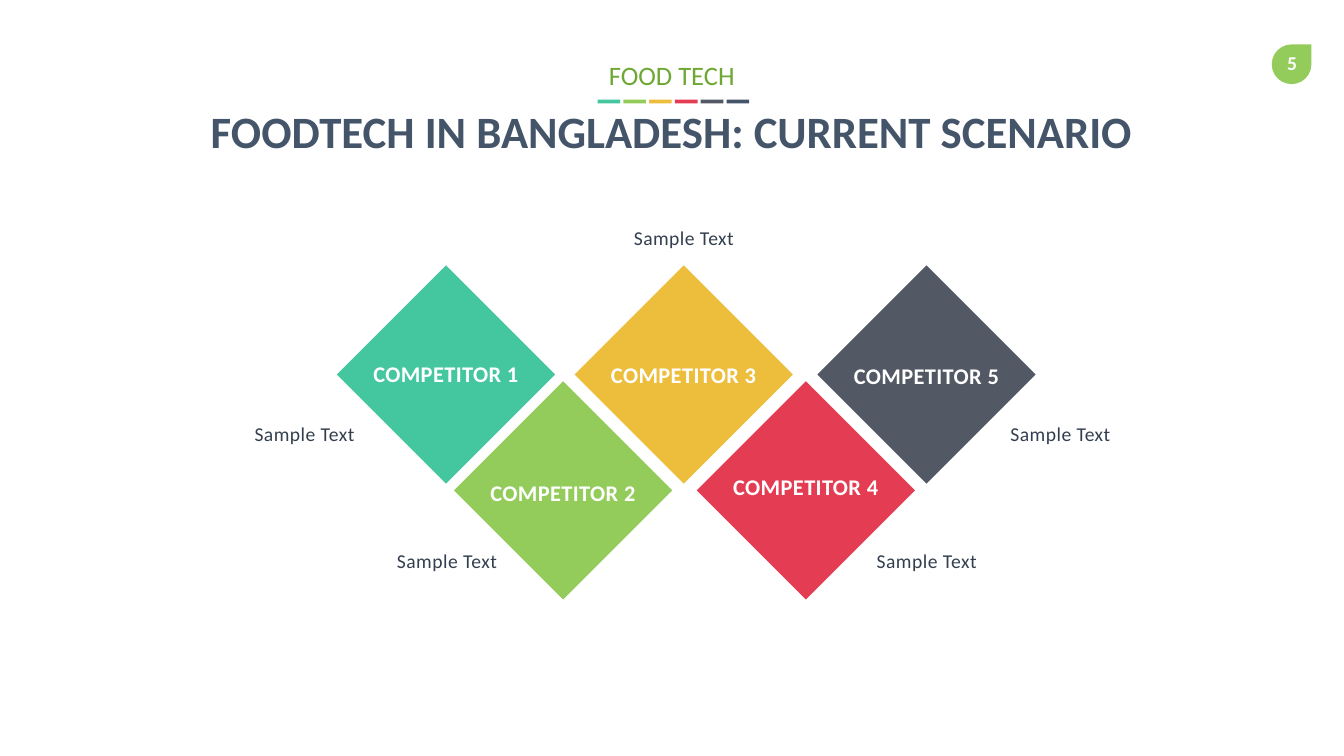
from pptx import Presentation
from pptx.dml.color import RGBColor
from pptx.enum.shapes import MSO_SHAPE as Kind
from pptx.enum.text import MSO_AUTO_SIZE as Fit, PP_ALIGN as Align
from pptx.util import Cm, Pt

TEAL = RGBColor(0x44, 0xC6, 0x9E)
GREEN = RGBColor(0x93, 0xCC, 0x5A)
YELLOW = RGBColor(0xED, 0xBD, 0x3C)
RED = RGBColor(0xE4, 0x3D, 0x53)
GREY = RGBColor(0x52, 0x59, 0x64)
NAVY = RGBColor(0x44, 0x54, 0x69)
LEAF = RGBColor(0x6E, 0xA8, 0x34)
INK = RGBColor(0x33, 0x3F, 0x4F)
WHITE = RGBColor(0xFF, 0xFF, 0xFF)

SIDE = 3.89
TILES = "COMPETITOR {}"
# colour, centre x, row, label shift, note shift x and y
RIVALS = [
    (TEAL, 2.96, 0, -0.03, -3.57, 1.49),
    (GREEN, 5.91, 1, 0.05, -2.93, 1.77),
    (YELLOW, 8.95, 0, 0, 0, -3.44),
    (RED, 12.03, 1, -0.08, 3.04, 1.77),
    (GREY, 15.07, 0, 0.03, 3.37, 1.49),
]


def put_shape(shapes, kind, box, color):
    shape = shapes.add_shape(kind, *map(Cm, box))
    shape.shadow.inherit = False
    shape.fill.solid()
    shape.fill.fore_color.rgb = color
    shape.line.fill.background()
    return shape


def put_text(shapes, box, text, size, color, bold=False, wrap=True,
             space=0, flush=False):
    """Add a centred line; space is letter spacing in hundredths of a point."""
    frame = shapes.add_textbox(*map(Cm, box)).text_frame
    frame.word_wrap = wrap
    frame.auto_size = Fit.SHAPE_TO_FIT_TEXT
    if flush:
        frame.margin_left = frame.margin_right = 0
        frame.margin_top = frame.margin_bottom = 0
    para = frame.paragraphs[0]
    para.alignment = Align.CENTER
    run = para.add_run()
    run.text = text
    font = run.font
    font.name, font.size, font.bold = "Calibri", Pt(size), bold
    font.color.rgb = color
    if space:
        run._r.get_or_add_rPr().set("spc", str(space))


def add_badge(slide, x, y, size):
    put_shape(slide.shapes, Kind.TEAR, (x, y, size, size), GREEN)
    put_text(slide.shapes, (x - 0.03, y + 0.03, 1.09, 0.86), "5", 14, WHITE,
             bold=True, wrap=False)


def add_header(slide, x, y, width):
    shapes = slide.shapes.add_group_shape().shapes
    put_text(shapes, (x, y + 1.12, width, 1.63),
             "FOODTECH IN BANGLADESH: CURRENT SCENARIO", 32, NAVY, bold=True)
    step, wide = 0.65, 0.57
    colors = [TEAL, GREEN, YELLOW, RED, GREY, NAVY]
    left = x + (width - 5 * step - wide) / 2 + 0.04
    for i, color in enumerate(colors):
        put_shape(shapes, Kind.RECTANGLE,
                  (left + i * step, y + 1.14, wide, 0.1), color)
    put_text(shapes, (x, y, width, 1.07), "FOOD TECH", 19, LEAF)


def add_tile(slide, x, y, color, text, shift):
    """Add a diamond centred on x, y with its label."""
    shapes = slide.shapes.add_group_shape().shapes
    tile = put_shape(shapes, Kind.RECTANGLE,
                     (x - SIDE / 2, y - SIDE / 2, SIDE, SIDE), color)
    tile.rotation = 45
    put_text(shapes, (x - 2.11, y + shift - 0.47, 4.22, 0.94), text, 16,
             WHITE, bold=True, wrap=False, space=30)


def add_rivals(slide, x, y):
    """Add the two rows of diamonds and their notes from a top left corner."""
    for i, (color, dx, row, shift, nx, ny) in enumerate(RIVALS, 1):
        mid, level = x + dx, y + 2.75 + row * 2.92
        add_tile(slide, mid, level, color, TILES.format(i), shift)
        put_text(slide.shapes, (mid + nx - 1.57, level + ny - 0.3, 3.15, 0.6),
                 "Sample Text", 14, INK, space=30, flush=True)


def main():
    deck = Presentation()
    deck.slide_width, deck.slide_height = Cm(33.87), Cm(19.05)
    slide = deck.slides.add_slide(deck.slide_layouts[6])
    add_badge(slide, 32.05, 1.12, 1)
    add_header(slide, 2.39, 1.37, 29.08)
    add_rivals(slide, 8.28, 6.69)
    deck.save("out.pptx")


if __name__ == "__main__":
    main()
